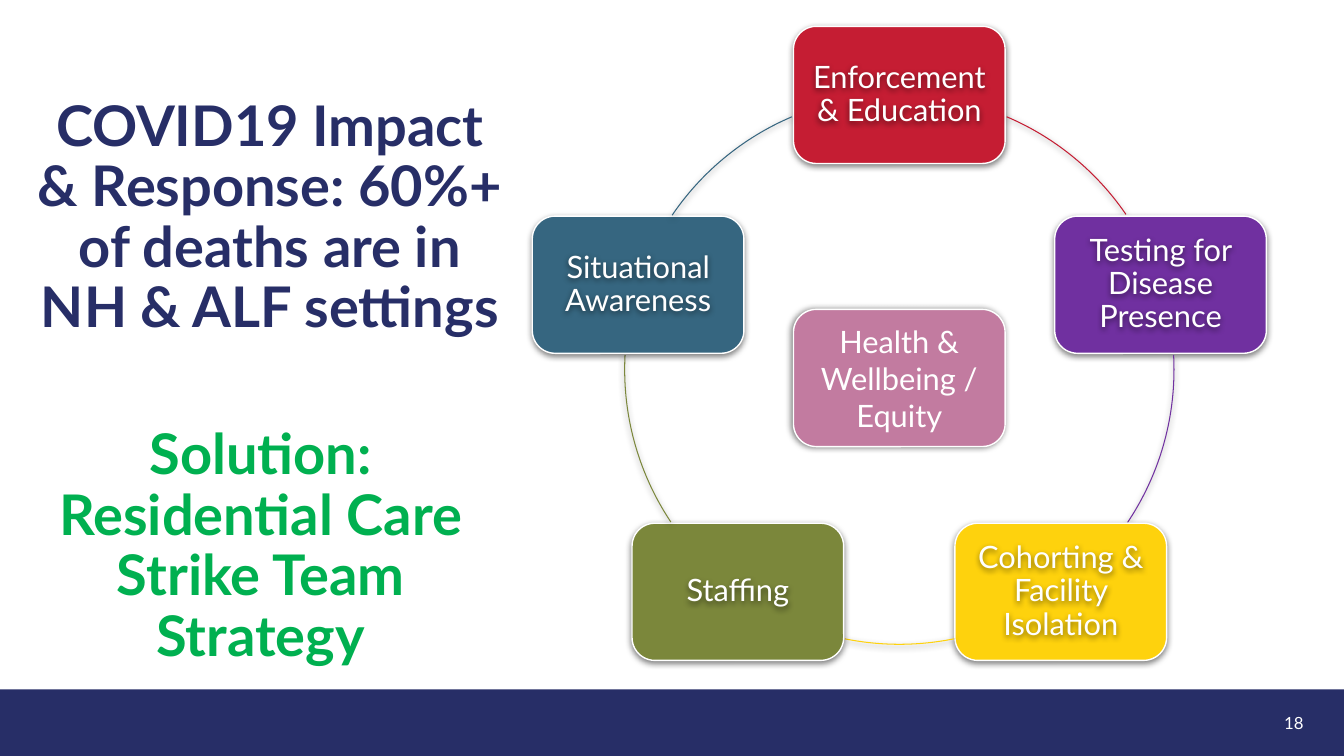
from dataclasses import dataclass
from math import cos, radians, sin

from lxml import etree
from pptx import Presentation
from pptx.dml.color import RGBColor
from pptx.enum.shapes import MSO_SHAPE as Preset
from pptx.enum.text import MSO_ANCHOR as Anchor, PP_ALIGN as Align
from pptx.oxml.ns import qn
from pptx.util import Pt

COLORS = {
    "navy": "272E67", "green": "00B050", "white": "FFFFFF", "red": "C51D33",
    "purple": "7030A0", "yellow": "FED20D", "olive": "7B873B",
    "teal": "366680", "pink": "C27BA0", "black": "000000",
}
FONT = "Lato"
RING_X, RING_Y, RING_RADIUS = 642.4, 264, 196.2
CARD_WIDTH, CARD_HEIGHT = 151.2, 98
LABEL_MARGIN = 4.8


@dataclass(frozen=True)
class Frame:
    left: float
    top: float
    width: float
    height: float

    def lengths(self) -> tuple:
        return Pt(self.left), Pt(self.top), Pt(self.width), Pt(self.height)

    def shrunk(self, margin: float) -> "Frame":
        return Frame(self.left + margin, self.top + margin,
                     self.width - 2 * margin, self.height - 2 * margin)


@dataclass(frozen=True)
class Step:
    """A card on the ring, with the arc leaving it (degrees clockwise from the right)."""
    label: str
    color: str
    arc_start: float
    arc_end: float


STEPS = [
    Step("Enforcement & Education", "red", 293, 325.6),
    Step("Testing for Disease Presence", "purple", 357, 33.8),
    Step("Cohorting & Facility Isolation", "yellow", 78.5, 101.5),
    Step("Staffing", "olive", 146.3, 183),
    Step("Situational Awareness", "teal", 214.2, 247),
]


def rgb(name: str) -> RGBColor:
    return RGBColor.from_string(COLORS[name])


def card_frame(center_x: float, center_y: float) -> Frame:
    return Frame(center_x - CARD_WIDTH / 2, center_y - CARD_HEIGHT / 2,
                 CARD_WIDTH, CARD_HEIGHT)


def add_shadow(shape, angle: float = 90) -> None:
    shape.shadow.inherit = False
    effects = shape._element.spPr.find(qn("a:effectLst"))
    shadow = etree.SubElement(effects, qn("a:outerShdw"), blurRad=str(Pt(4.5)),
                              dist=str(Pt(1.5)), dir=str(int(angle * 60000)),
                              rotWithShape="0")
    color = etree.SubElement(shadow, qn("a:srgbClr"), val=COLORS["black"])
    etree.SubElement(color, qn("a:alpha"), val="50000")


def write_text(box, text: str, size: float, color: str, inset_x: float, inset_y: float,
               align=Align.CENTER, spacing: float = 0.9, bold: bool = False) -> None:
    frame = box.text_frame
    frame.word_wrap = True
    frame.vertical_anchor = Anchor.MIDDLE
    frame.margin_left = frame.margin_right = Pt(inset_x)
    frame.margin_top = frame.margin_bottom = Pt(inset_y)
    para = frame.paragraphs[0]
    para.text = text
    para.alignment = align
    para.line_spacing = spacing
    para.font.name = FONT
    para.font.size = Pt(size)
    para.font.bold = bold
    para.font.color.rgb = rgb(color)


def add_card(page, frame: Frame, color: str, shadow_angle: float = 90):
    card = page.shapes.add_shape(Preset.ROUNDED_RECTANGLE, *frame.lengths())
    card.fill.solid()
    card.fill.fore_color.rgb = rgb(color)
    card.line.color.rgb = rgb("white")
    card.line.width = Pt(1)
    add_shadow(card, shadow_angle)
    return card


def add_arc(page, step: Step) -> None:
    arc = page.shapes.add_shape(
        Preset.ARC, Pt(RING_X - RING_RADIUS), Pt(RING_Y - RING_RADIUS),
        Pt(2 * RING_RADIUS), Pt(2 * RING_RADIUS))
    # Adjustments count 100000 units, angles 60000 units to the degree
    arc.adjustments[0] = step.arc_start * 0.6
    arc.adjustments[1] = step.arc_end * 0.6
    arc.fill.background()
    arc.line.color.rgb = rgb(step.color)
    arc.line.width = Pt(0.75)
    add_shadow(arc)


def add_cycle(page) -> None:
    for index, step in enumerate(STEPS):
        turn = radians(index * 360 / len(STEPS))
        frame = card_frame(RING_X + RING_RADIUS * sin(turn),
                           RING_Y - RING_RADIUS * cos(turn))
        add_card(page, frame, step.color)
        label = page.shapes.add_textbox(*frame.shrunk(LABEL_MARGIN).lengths())
        write_text(label, step.label, 22, "white", 6.5, 6.5)
        add_shadow(label)
        add_arc(page, step)
    goal = add_card(page, card_frame(RING_X, 270), "pink", 173)
    write_text(goal, "Health & Wellbeing / Equity", 22, "white", 7.2, 7.2, spacing=1)


def add_footer(page) -> None:
    band = page.shapes.add_shape(Preset.RECTANGLE, *Frame(0, 492.5, 960, 47.5).lengths())
    band.shadow.inherit = False
    band.fill.solid()
    band.fill.fore_color.rgb = rgb("navy")
    band.line.fill.background()
    number = page.shapes.add_textbox(*Frame(722.2, 502, 216, 28.8).lengths())
    write_text(number, "18", 12, "white", 7.2, 3.6, align=Align.RIGHT, spacing=1)


def add_headlines(page) -> None:
    solution = page.shapes.add_textbox(*Frame(13, 251.3, 346.3, 279.4).lengths())
    write_text(solution, "Solution: Residential Care Strike Team Strategy",
               40, "green", 7.2, 3.6, bold=True)
    impact = page.shapes.add_textbox(*Frame(26, 116, 333.4, 80.6).lengths())
    write_text(impact, "COVID19 Impact & Response: 60%+ of deaths are in NH & ALF settings ",
               40, "navy", 0, 0, bold=True)


def main() -> None:
    deck = Presentation()
    deck.slide_width, deck.slide_height = Pt(960), Pt(540)
    page = deck.slides.add_slide(deck.slide_layouts[6])
    add_footer(page)
    add_headlines(page)
    add_cycle(page)
    deck.save("out.pptx")


if __name__ == "__main__":
    main()
